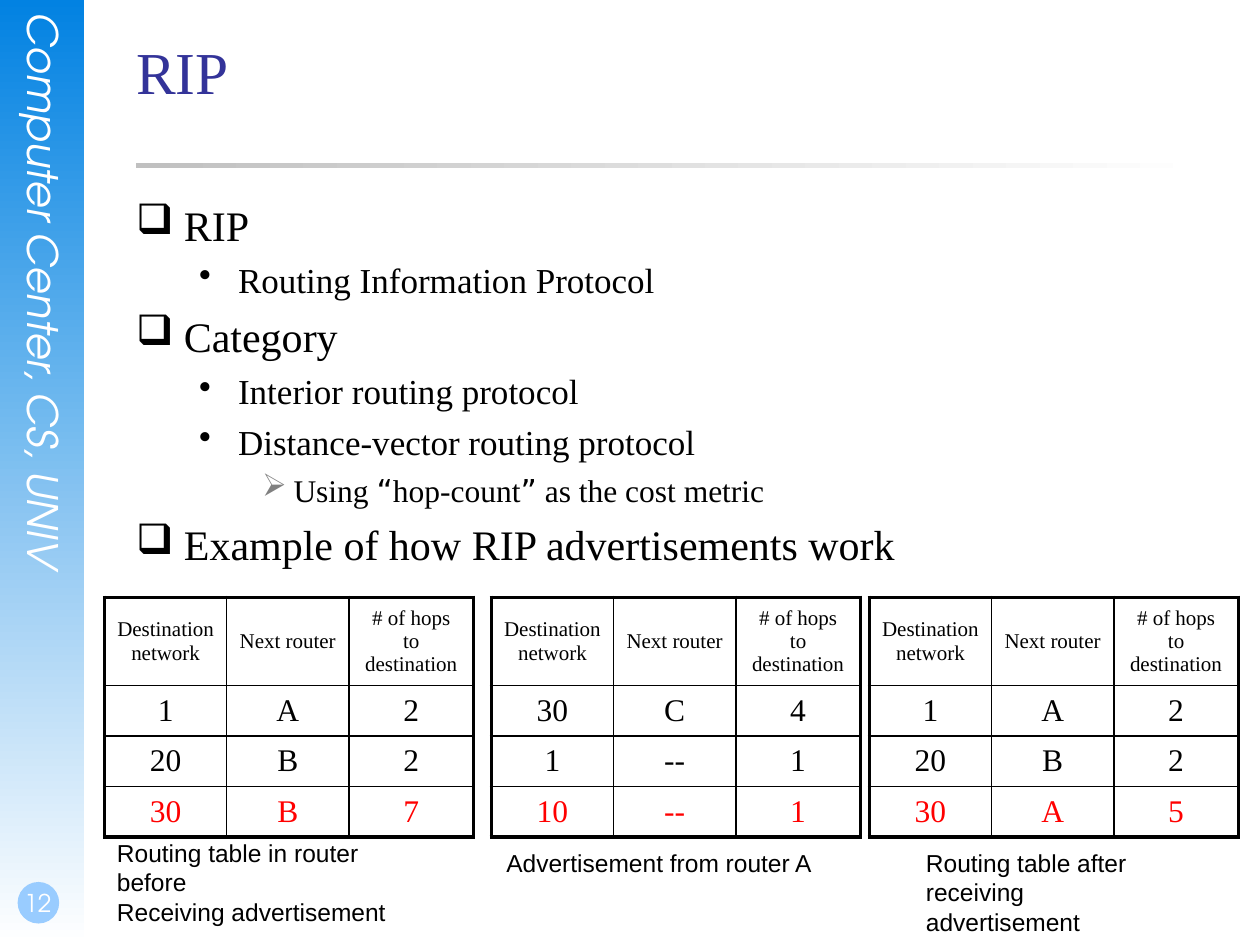
from lxml.etree import SubElement
from pptx import Presentation
from pptx.dml.color import RGBColor
from pptx.enum.shapes import MSO_SHAPE
from pptx.enum.text import MSO_ANCHOR, PP_ALIGN
from pptx.oxml.ns import qn
from pptx.util import Inches, Pt

BLACK = RGBColor(0x00, 0x00, 0x00)
WHITE = RGBColor(0xFF, 0xFF, 0xFF)
RED = RGBColor(0xFF, 0x00, 0x00)
NAVY = RGBColor(0x33, 0x33, 0x99)
BLUE = RGBColor(0x02, 0x82, 0xE2)
SKY = RGBColor(0x99, 0xCC, 0xFF)
SILVER = RGBColor(0xC0, 0xC0, 0xC0)
GRAY = RGBColor(0x80, 0x80, 0x80)

SERIF, SANS, SIDE = "Times New Roman", "Arial", "TeX Gyre Adventor"
QUOTE = "DejaVu Sans"

# Per level: bullet, bullet colour, text size, left margin, hanging indent
LEVELS = [
    ("❑", BLACK, 24, 0.38, 0.38),
    ("•", BLACK, 20, 0.81, 0.31),
    ("➢", GRAY, 18, 1.25, 0.25),
]
POINTS = [
    (0, "RIP"),
    (1, "Routing Information Protocol"),
    (0, "Category"),
    (1, "Interior routing protocol"),
    (1, "Distance-vector routing protocol"),
    (2, "Using “hop-count” as the cost metric"),
    (0, "Example of how RIP advertisements work"),
]
HEADS = ["Destination\nnetwork", "Next router", "# of hops to\ndestination"]
COLS, ROWS = [0.97, 0.97, 0.99], [0.5, 0.4, 0.4, 0.4]
# Left edge and body rows; the last row is highlighted
TABLES = [
    (0.83, ["1 A 2", "20 B 2", "30 B 7"]),
    (3.9, ["30 C 4", "1 -- 1", "10 -- 1"]),
    (6.9, ["1 A 2", "20 B 2", "30 A 5"]),
]
CAPTIONS = [
    ((0.83, 6.6, 2.6, 0.57),
     ["Routing table in router before", "Receiving advertisement"]),
    ((3.92, 6.68, 2.75, 0.33), ["Advertisement from router A"]),
    ((7.25, 6.68, 2.25, 0.57),
     ["Routing table after", "receiving advertisement"]),
]


def style(para, size, face, color):
    font = para.font
    font.size, font.name, font.color.rgb = Pt(size), face, color


def add_text(slide, box, lines, size, face, color, inset=(0, 0, 0, 0)):
    frame = slide.shapes.add_textbox(*map(Inches, box)).text_frame
    frame.word_wrap = True
    (frame.margin_left, frame.margin_top,
     frame.margin_right, frame.margin_bottom) = map(Inches, inset)
    for i, line in enumerate(lines):
        para = frame.add_paragraph() if i else frame.paragraphs[0]
        para.text = line
        style(para, size, face, color)
    return frame


def add_block(slide, kind, box):
    shape = slide.shapes.add_shape(kind, *map(Inches, box))
    shape.shadow.inherit = False
    shape.line.fill.background()
    return shape


def fade(shape, color, angle):
    """Fill with a gradient from color to white."""
    shape.fill.gradient()
    shape.fill.gradient_angle = angle
    for stop, tone in zip(shape.fill.gradient_stops, (color, WHITE)):
        stop.color.rgb = tone


def space(para):
    """Put a quarter line above the paragraph."""
    props = para._p.get_or_add_pPr()
    before = SubElement(props, qn("a:spcBef"))
    SubElement(before, qn("a:spcPct"), val="25000")
    return props


def add_sidebar(slide, left, top, width, height):
    bar = add_block(slide, MSO_SHAPE.RECTANGLE, (left, top, width, height))
    fade(bar, BLUE, 270)
    name = add_text(slide, (left + 0.15, top + 0.1, 0.4, 5.11),
                    ["Computer Center, CS, UNIV"], 24, SIDE, WHITE)
    name.paragraphs[0].font.italic = True
    name._txBody.bodyPr.set("vert", "eaVert")
    base = top + height
    dot = add_block(slide, MSO_SHAPE.OVAL, (left + 0.14, base - 0.5, 0.33, 0.33))
    dot.fill.solid()
    dot.fill.fore_color.rgb = SKY
    page = add_text(slide, (left, base - 0.67, 0.58, 0.5), ["12"], 14, SIDE,
                    WHITE, (0.02, 0, 0, 0.05))
    page.vertical_anchor = MSO_ANCHOR.BOTTOM
    page.paragraphs[0].alignment = PP_ALIGN.CENTER


def add_title(slide, left, top, width, height):
    rule = add_block(slide, MSO_SHAPE.RECTANGLE, (left, top + 1.01, width, 0.04))
    fade(rule, SILVER, 0)
    add_text(slide, (left, top, width, height), ["RIP"], 34, SERIF, NAVY)


def split_quotes(para):
    """Rebuild the runs so that curly quotes get their own font."""
    text = para.text
    para.clear()
    for part in text.replace("“", "|“|").replace("”", "|”|").split("|"):
        run = para.add_run()
        run.text = part
        if part in "“”":
            run.font.name = QUOTE


def add_points(slide, *box):
    frame = add_text(slide, box, [text for _, text in POINTS], 24, SERIF, BLACK)
    for para, (level, text) in zip(frame.paragraphs, POINTS):
        mark, color, size, margin, hang = LEVELS[level]
        para.level = level
        para.font.size = Pt(size)
        if "“" in text:
            split_quotes(para)
        props = space(para)
        props.set("marL", str(Inches(margin)))
        props.set("indent", str(-Inches(hang)))
        tint = SubElement(props, qn("a:buClr"))
        SubElement(tint, qn("a:srgbClr"), val=str(color))
        SubElement(props, qn("a:buChar"), char=mark)
        props.append(props.find(qn("a:defRPr")))


def add_border(cell, side, width):
    line = SubElement(cell._tc.get_or_add_tcPr(), qn("a:ln" + side),
                      w=str(Pt(width)))
    fill = SubElement(line, qn("a:solidFill"))
    SubElement(fill, qn("a:srgbClr"), val=str(BLACK))


def fill_cell(cell, text, size, color, edges):
    para = cell.text_frame.paragraphs[0]
    para.text = text
    props = space(para)
    para.alignment = PP_ALIGN.CENTER
    style(para, size, SERIF, color)
    props.append(props.find(qn("a:defRPr")))
    cell.vertical_anchor = MSO_ANCHOR.MIDDLE
    for side, outer in zip("LRTB", edges):
        add_border(cell, side, 2.25 if outer else 1)
    cell.fill.background()


def add_routes(slide, left, top, body):
    rows = [HEADS] + [line.split() for line in body]
    box = (left, top, sum(COLS), sum(ROWS))
    table = slide.shapes.add_table(len(ROWS), len(COLS),
                                   *map(Inches, box)).table
    table.first_row = table.horz_banding = False
    for col, width in zip(table.columns, COLS):
        col.width = Inches(width)
    end, last = len(ROWS) - 1, len(COLS) - 1
    for r, row in enumerate(rows):
        table.rows[r].height = Inches(ROWS[r])
        for c, text in enumerate(row):
            fill_cell(table.cell(r, c), text, 18 if r else 12,
                      RED if r == end else BLACK,
                      (c == 0, c == last, r == 0, r == end))


def main():
    deck = Presentation()
    deck.slide_width, deck.slide_height = Inches(10), Inches(7.5)
    slide = deck.slides.add_slide(deck.slide_layouts[6])
    add_sidebar(slide, 0, 0, 0.67, 7.5)
    add_title(slide, 1.08, 0.28, 8.5, 1.25)
    add_points(slide, 1.08, 1.58, 8.5, 5.08)
    for box, lines in CAPTIONS:
        add_text(slide, box, lines, 14, SANS, BLACK, (0.1, 0.05, 0.1, 0.05))
    for left, body in TABLES:
        add_routes(slide, left, 4.74, body)
    deck.save("out.pptx")


if __name__ == "__main__":
    main()
